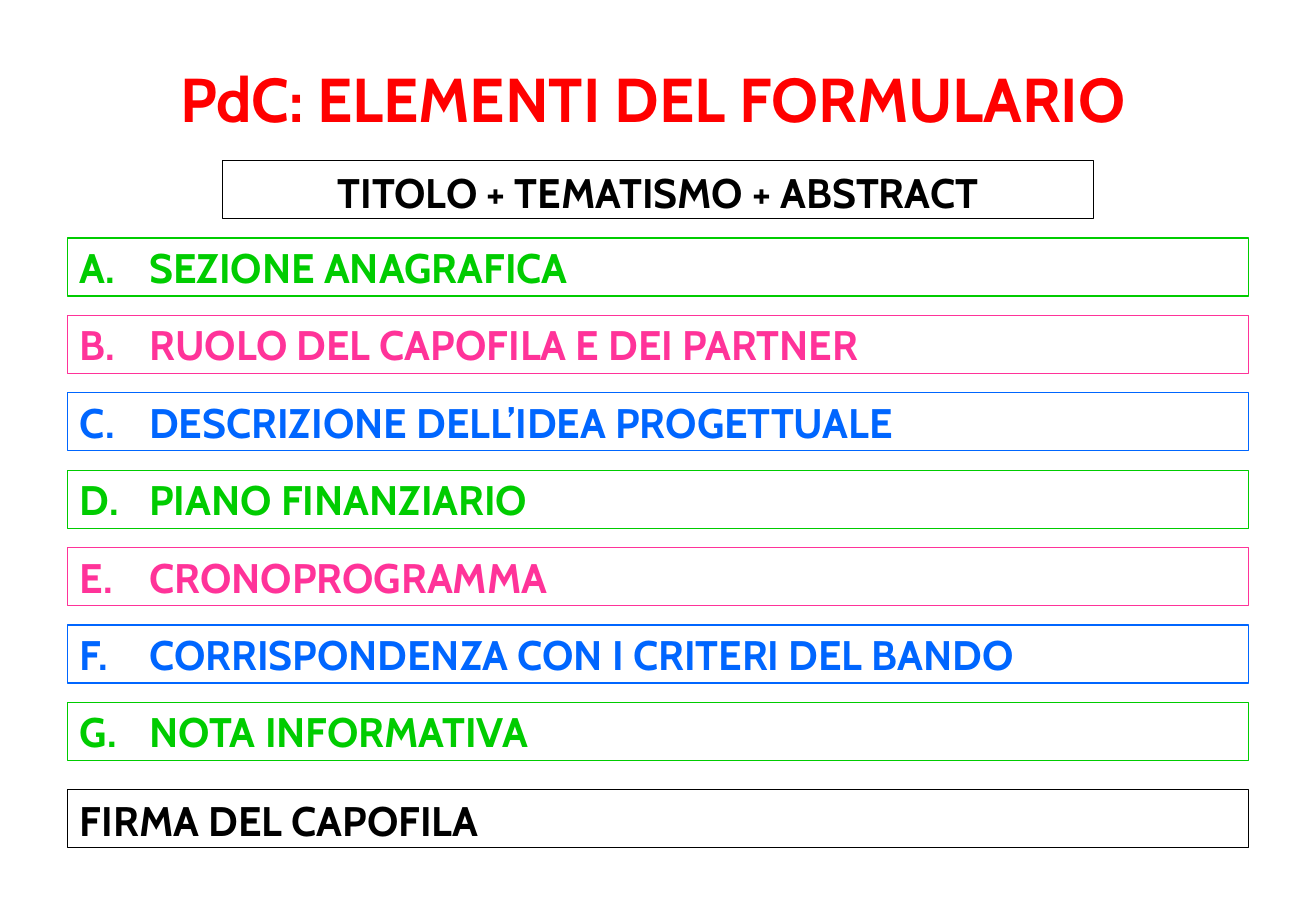
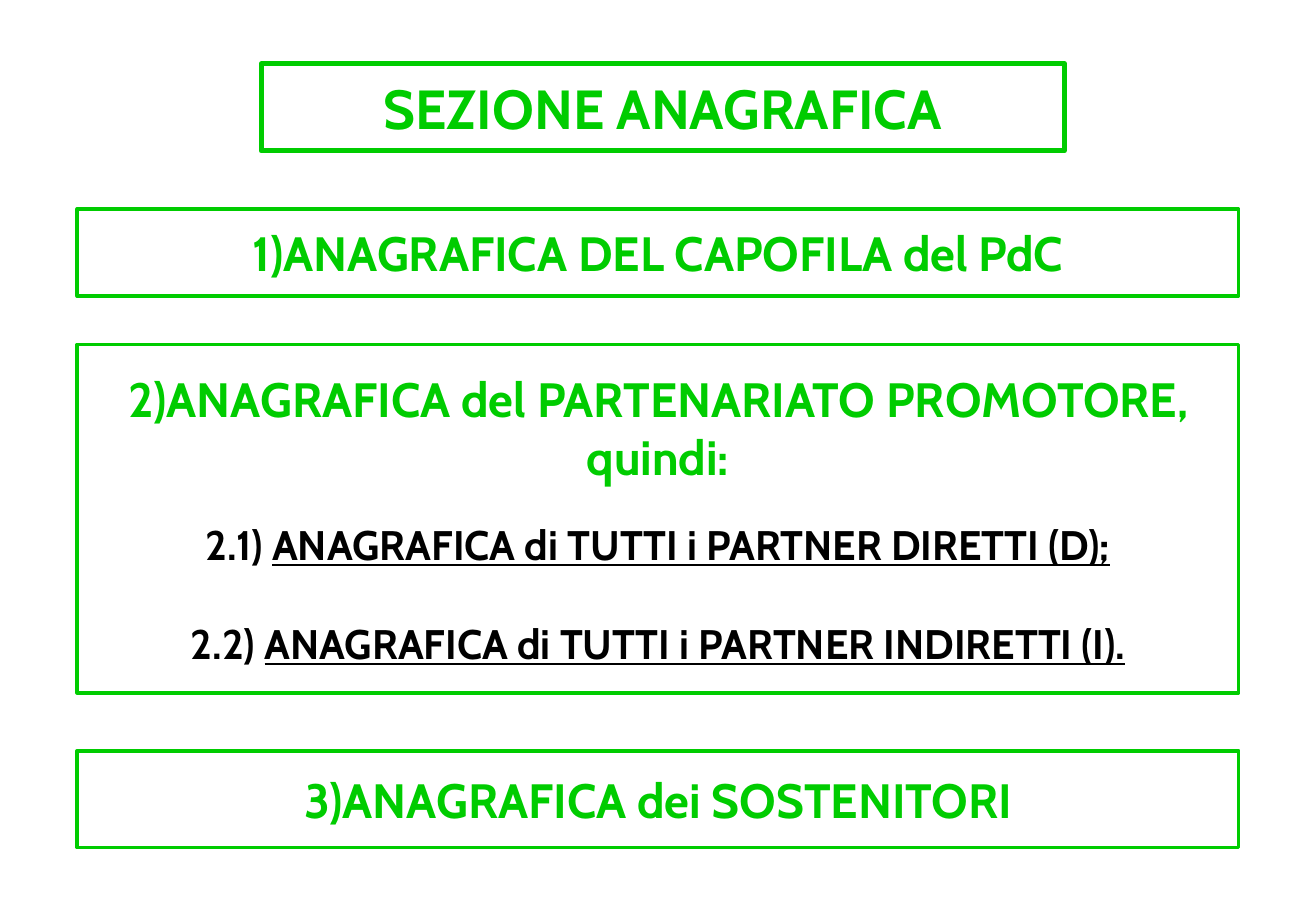
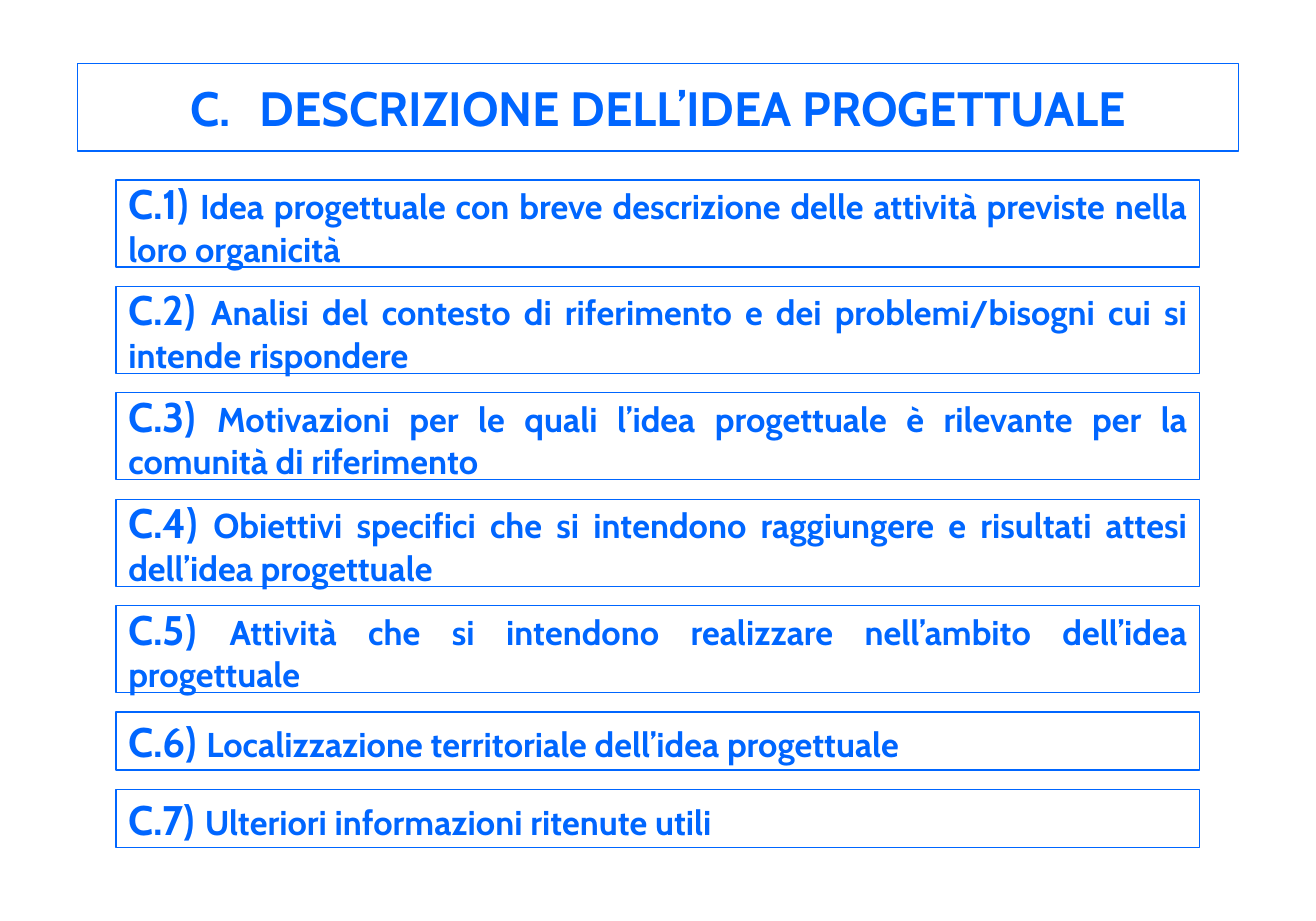
from lxml import etree
from pptx import Presentation
from pptx.dml.color import RGBColor
from pptx.enum.shapes import MSO_SHAPE as Preset
from pptx.enum.text import MSO_ANCHOR as Anchor, MSO_AUTO_SIZE as AutoSize, PP_ALIGN as Align
from pptx.oxml.ns import qn
from pptx.util import Inches, Pt

WIDTH, HEIGHT, COLUMNS = 10.63, 7.44, 68
COLORS = {"black": "000000", "red": "FF0000", "green": "00CC00",
          "pink": "FF3399", "blue": "0066FF"}
TITLE_AND_BODY, TITLE_ONLY = 1, 5


class Page:
    """One slide on a grid of square cells, with the style all slides share."""
    font = "Cabin"
    hanging = 0.56
    thin, medium, thick = 0.75, 2.25, 3

    def __init__(self, deck, layout):
        self.slide = deck.slides.add_slide(deck.slide_layouts[layout])

    def place(self, shape, area, color=None, weight=thin):
        """Put a shape on (column, row, columns, rows), outlined if it has a color."""
        cells = [Inches(WIDTH / COLUMNS * cell) for cell in area]
        for name, value in zip(("left", "top", "width", "height"), cells):
            setattr(shape, name, value)
        if color:
            shape.fill.background()
            shape.line.color.rgb = RGBColor.from_string(COLORS[color])
            shape.line.width = Pt(weight)
        return shape

    def set_text(self, shape, paras, align=Align.CENTER, anchor=Anchor.MIDDLE, number=None):
        """Fill a shape with paragraphs, each a pair of space before and spans."""
        frame = shape.text_frame
        settings = {"word_wrap": True, "auto_size": AutoSize.NONE, "vertical_anchor": anchor}
        for name, value in settings.items():
            setattr(frame, name, value)
        for index, (space, spans) in enumerate(paras):
            para = frame.add_paragraph() if index else frame.paragraphs[0]
            para.alignment = align
            para.space_before = Pt(space)
            self.mark(para, number)
            for text, size, color, underline in spans:
                span = para.add_run()
                span.text = text
                formats = {"name": self.font, "size": Pt(size), "bold": True,
                           "underline": underline}
                for name, value in formats.items():
                    setattr(span.font, name, value)
                span.font.color.rgb = RGBColor.from_string(COLORS[color])

    def mark(self, para, number):
        """Give a paragraph a capital letter as its number, or no bullet."""
        props = para._p.get_or_add_pPr()
        indent = Inches(self.hanging) if number else 0
        props.set("marL", str(indent))
        props.set("indent", str(-indent))
        if number:
            etree.SubElement(props, qn("a:buAutoNum"), type="alphaUcPeriod",
                             startAt=str(number))
        else:
            etree.SubElement(props, qn("a:buNone"))

    def title(self, text, area, size, color, weight=None, number=None):
        shape = self.place(self.slide.shapes.title, area, weight and color, weight)
        self.set_text(shape, [(0, [(text, size, color, False)])], number=number)

    def body(self, text, area, size, color, space):
        shape = self.place(self.slide.placeholders[1], area, color)
        self.set_text(shape, [(space, [(text, size, color, False)])], anchor=Anchor.TOP)

    def box(self, paras, area, color, weight=thin, **style):
        shape = self.slide.shapes.add_shape(Preset.RECTANGLE, 0, 0, 0, 0)
        shape.shadow.inherit = False
        self.set_text(self.place(shape, area, color, weight), paras, **style)


def form_elements(deck):
    page = Page(deck, TITLE_AND_BODY)
    page.title("PdC: ELEMENTI DEL FORMULARIO", (3, 2.8, 61.5, 4.5), 36, "red")
    page.body("TITOLO + TEMATISMO + ABSTRACT", (11.5, 8.3, 45, 3), 24, "black", 4.8)
    sections = ["SEZIONE ANAGRAFICA", "RUOLO DEL CAPOFILA E DEI PARTNER",
                "DESCRIZIONE DELL’IDEA PROGETTUALE", "PIANO FINANZIARIO",
                "CRONOPROGRAMMA", "CORRISPONDENZA CON I CRITERI DEL BANDO",
                "NOTA INFORMATIVA"]
    cycle = ["green", "pink", "blue"]
    for index, section in enumerate(sections):
        color = cycle[index % len(cycle)]
        page.box([(0, [(section, 24, color, False)])], (3.5, 12.3 + 4 * index, 61, 3),
                 color, align=Align.JUSTIFY, number=index + 1)
    page.box([(4.8, [("FIRMA DEL CAPOFILA", 24, "black", False)])], (3.5, 40.8, 61, 3),
             "black", align=Align.LEFT, anchor=Anchor.TOP)


def registry_section(deck):
    page = Page(deck, TITLE_ONLY)
    page.title("SEZIONE ANAGRAFICA", (13.5, 3.3, 41.5, 4.5), 32, "green", page.thick)
    partners = [(space, [(label, 24, "black", False), (text, 24, "black", True)])
                for space, label, text in (
                    (20, "2.1) ", "ANAGRAFICA di TUTTI i PARTNER DIRETTI (D);"),
                    (29, "2.2) ", "ANAGRAFICA di TUTTI i PARTNER INDIRETTI (I)."))]
    for heading, details, row, rows in (
            ("1)ANAGRAFICA DEL CAPOFILA del PdC", [], 10.8, 4.5),
            ("2)ANAGRAFICA del PARTENARIATO PROMOTORE, quindi:", partners, 17.8, 18),
            ("3)ANAGRAFICA dei SOSTENITORI", [], 38.8, 5)):
        page.box([(0, [(heading, 28, "green", False)])] + details, (4, row, 60, rows),
                 "green", page.medium)


def project_idea(deck):
    page = Page(deck, TITLE_ONLY)
    page.title("DESCRIZIONE DELL’IDEA PROGETTUALE", (4, 3.3, 60, 4.5), 28, "blue",
               page.thin, number=3)
    tall, low, gap = 4.5, 3, 1
    points = [
        ("Idea progettuale con breve descrizione delle attività previste nella loro organicità", tall),
        ("Analisi del contesto di riferimento e dei problemi/bisogni cui si intende rispondere", tall),
        ("Motivazioni per le quali l’idea progettuale è rilevante per la comunità di riferimento", tall),
        ("Obiettivi specifici che si intendono raggiungere e risultati attesi dell’idea progettuale", tall),
        ("Attività che si intendono realizzare nell’ambito dell’idea progettuale", tall),
        ("Localizzazione territoriale dell’idea progettuale", low),
        ("Ulteriori informazioni ritenute utili", low)]
    row = 9.3
    for number, (text, rows) in enumerate(points, 1):
        spans = [(f"C.{number}) ", 24, "blue", False), (text, 20, "blue", False)]
        page.box([(0, spans)], (6, row, 56, rows), "blue", align=Align.JUSTIFY)
        row += rows + gap


def main():
    deck = Presentation()
    deck.slide_width, deck.slide_height = Inches(WIDTH), Inches(HEIGHT)
    for build in (form_elements, registry_section, project_idea):
        build(deck)
    deck.save("out.pptx")


if __name__ == "__main__":
    main()
